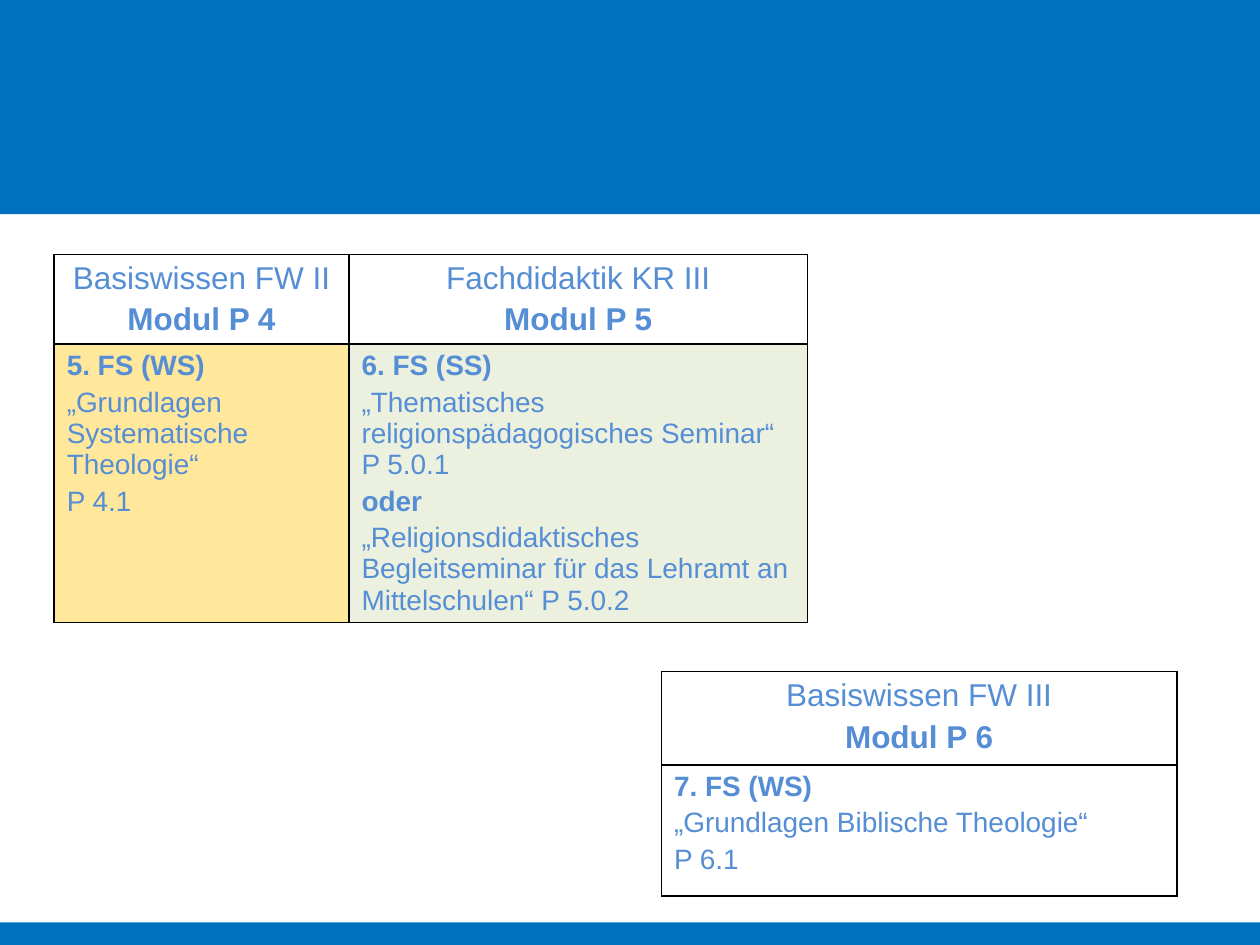
from lxml.etree import SubElement
from pptx import Presentation
from pptx.dml.color import RGBColor
from pptx.enum.shapes import MSO_SHAPE
from pptx.enum.text import PP_ALIGN
from pptx.oxml.ns import qn
from pptx.util import Inches, Pt

BLUE, TEXT, YELLOW, GREEN = "0070C0", "558ED5", "FFE79B", "EBF1DE"


def color(hex_string):
    """Turn a hex string into a colour."""
    return RGBColor.from_string(hex_string)


def add_band(s, top, height):
    """Add a blue band across the whole slide."""
    sp = s.shapes.add_shape(MSO_SHAPE.RECTANGLE, 0, Inches(top), Inches(10), Inches(height))
    sp.shadow.inherit = False
    sp.fill.solid()
    sp.fill.fore_color.rgb = color(BLUE)
    sp.line.fill.background()


def write_text(tf, lines, size=16, bold=(), align=PP_ALIGN.LEFT):
    """Write one paragraph per line, with the lines at the bold indexes set bold."""
    for i, line in enumerate(lines):
        p = tf.paragraphs[0] if i == 0 else tf.add_paragraph()
        p.alignment = align
        p.space_before = Pt(0.2 * size if i else 0)
        r = p.add_run()
        r.text = line
        r.font.name = "Arial"
        r.font.size = Pt(size)
        r.font.bold = i in bold
        r.font.color.rgb = color(TEXT)


def set_borders(cell):
    """Draw a thin black line on every side of a cell."""
    tc_pr = cell._tc.get_or_add_tcPr()
    for side in ("lnL", "lnR", "lnT", "lnB"):
        ln = SubElement(tc_pr, qn(f"a:{side}"), w=str(Pt(1)))
        SubElement(SubElement(ln, qn("a:solidFill")), qn("a:srgbClr"), val="000000")


def fill_cell(cell, fill):
    """Fill a cell with a colour, or leave it clear."""
    if fill:
        cell.fill.solid()
        cell.fill.fore_color.rgb = color(fill)
    else:
        cell.fill.background()


def add_module_table(s, left, top, widths, heights, modules):
    """Add a table with one column per module: heading above, courses below."""
    frame = s.shapes.add_table(2, len(modules), Inches(left), Inches(top),
                               Inches(sum(widths)), Inches(sum(heights)))
    table = frame.table
    table.first_row = table.horz_banding = False
    for row, height in zip(table.rows, heights):
        row.height = Inches(height)
    for col, (width, (heading, courses, bold, fill)) in enumerate(zip(widths, modules)):
        table.columns[col].width = Inches(width)
        head, body = table.cell(0, col), table.cell(1, col)
        write_text(head.text_frame, heading, size=18, bold=(1,), align=PP_ALIGN.CENTER)
        write_text(body.text_frame, courses, bold=bold)
        for cell, cell_fill in ((head, None), (body, fill)):
            set_borders(cell)
            fill_cell(cell, cell_fill)


def main():
    """Build the slide and save it."""
    prs = Presentation()
    prs.slide_width, prs.slide_height = Inches(10), Inches(7.5)
    s = prs.slides.add_slide(prs.slide_layouts[6])
    add_band(s, 0, 1.7)
    add_band(s, 7.32, 0.18)
    add_module_table(s, 0.43, 2.02, (2.34, 3.64), (0.71, 2.21), [
        (("Basiswissen FW II", "Modul P 4"),
         ("5. FS (WS)", "„Grundlagen Systematische Theologie“", "P 4.1"),
         (0,), YELLOW),
        (("Fachdidaktik KR III", "Modul P 5"),
         ("6. FS (SS)", "„Thematisches religionspädagogisches Seminar“ P 5.0.1", "oder",
          "„Religionsdidaktisches Begleitseminar für das Lehramt an Mittelschulen“ P 5.0.2"),
         (0, 2), GREEN),
    ])
    add_module_table(s, 5.25, 5.33, (4.09,), (0.74, 1.04), [
        (("Basiswissen FW III", "Modul P 6"),
         ("7. FS (WS)", "„Grundlagen Biblische Theologie“", "P 6.1"),
         (0,), None),
    ])
    prs.save("out.pptx")


if __name__ == "__main__":
    main()
